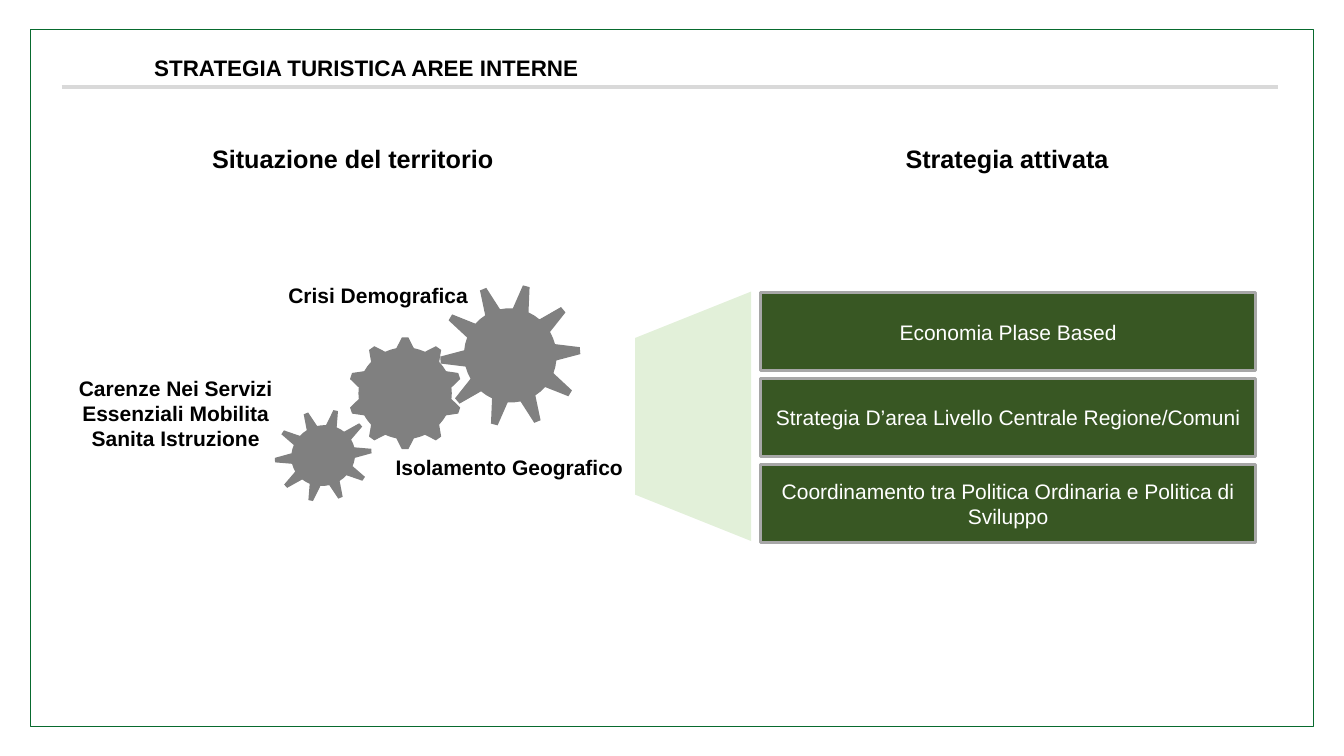
from dataclasses import dataclass
from math import cos, radians, sin

from lxml import etree
from pptx import Presentation
from pptx.dml.color import RGBColor
from pptx.enum.shapes import MSO_CONNECTOR, MSO_SHAPE
from pptx.enum.text import MSO_ANCHOR, MSO_AUTO_SIZE, PP_ALIGN
from pptx.oxml.ns import qn
from pptx.util import Cm, Pt

LEFT, CENTER = PP_ALIGN.LEFT, PP_ALIGN.CENTER
MIDDLE = MSO_ANCHOR.MIDDLE
FIT_SHAPE = MSO_AUTO_SIZE.SHAPE_TO_FIT_TEXT
RECTANGLE, TRAPEZOID = MSO_SHAPE.RECTANGLE, MSO_SHAPE.TRAPEZOID
STRAIGHT = MSO_CONNECTOR.STRAIGHT


@dataclass(frozen=True)
class Theme:
    font: str = "Arial"
    ink: str = "000000"
    paper: str = "FFFFFF"
    frame: str = "086A2E"
    rule: str = "D9D9D9"
    gear: str = "808080"
    funnel: str = "E2F0D9"
    bar: str = "385723"
    bar_edge: str = "A7A7A7"
    title_size: int = 32
    heading_size: int = 36
    body_size: int = 30


@dataclass(frozen=True)
class Box:
    """A region in centimetres."""
    left: float
    top: float
    width: float
    height: float

    def inner(self, x, y, width, height):
        return Box(self.left + x, self.top + y, width, height)

    def lengths(self):
        return Cm(self.left), Cm(self.top), Cm(self.width), Cm(self.height)


@dataclass(frozen=True)
class Gear:
    """An elliptic gear; tooth angles are half-widths in degrees."""
    x: float
    y: float
    radius_x: float
    radius_y: float
    tilt: float
    root: float
    tip_angle: float
    base_angle: float


THEME = Theme()
TEETH = 10

GEARS = (
    Gear(17.09, 12.73, 2.87, 2.82, 0, 0.82, 3.3, 10.8),
    Gear(12.96, 15.87, 2.46, 2.3, -22.3, 0.66, 2.8, 10),
    Gear(22.39, 10.82, 3.52, 3.61, -22.3, 0.66, 2.8, 10),
)
PROBLEMS = (
    ("Crisi Demografica", (9.52, 7.13, 12.42, 2.29)),
    ("Isolamento Geografico", (16.08, 15.8, 12.52, 4.45)),
    ("Carenze Nei Servizi Essenziali Mobilita Sanita Istruzione",
     (0, 11.83, 11.05, 3.99)),
)
STRATEGIES = (
    "Economia Plase Based",
    "Strategia D’area Livello Centrale Regione/Comuni",
    "Coordinamento tra Politica Ordinaria e Politica di Sviluppo",
)


def color(value):
    return RGBColor.from_string(value)


def paint(shape, fill=None, edge=None, edge_width=0):
    shape.shadow.inherit = False
    if fill:
        shape.fill.solid()
        shape.fill.fore_color.rgb = color(fill)
    else:
        shape.fill.background()
    if edge:
        shape.line.color.rgb = color(edge)
        shape.line.width = Pt(edge_width)
    else:
        shape.line.fill.background()


def write(shape, text, size, ink, bold=False, align=CENTER, inset=(0, 0)):
    frame = shape.text_frame
    frame.word_wrap = True
    frame.margin_left = frame.margin_right = Cm(inset[0])
    frame.margin_top = frame.margin_bottom = Cm(inset[1])
    frame.text = text
    paragraph = frame.paragraphs[0]
    paragraph.alignment = align
    font = paragraph.runs[0].font
    font.name, font.size, font.bold = THEME.font, Pt(size), bold
    font.color.rgb = color(ink)
    return frame


def add_label(slide, box, text, size, **options):
    textbox = slide.shapes.add_textbox(*box.lengths())
    return write(textbox, text, size, THEME.ink, bold=True, **options)


def add_heading(slide, box, text, size, align=LEFT, inset=(0.25, 0.13)):
    frame = add_label(slide, box, text, size, align=align, inset=inset)
    frame.word_wrap = False
    frame.auto_size = FIT_SHAPE


def add_gear(slide, box, gear):
    tilt = radians(gear.tilt)

    def point(angle, scale):
        x = gear.radius_x * scale * sin(radians(angle))
        y = -gear.radius_y * scale * cos(radians(angle))
        return (Cm(box.left + gear.x + x * cos(tilt) - y * sin(tilt)),
                Cm(box.top + gear.y + x * sin(tilt) + y * cos(tilt)))

    # Each tooth: base, two tip corners, base, then the valley
    step = 360 / TEETH
    profile = ((-gear.base_angle, gear.root), (-gear.tip_angle, 1),
               (gear.tip_angle, 1), (gear.base_angle, gear.root),
               (step / 2, gear.root))
    points = [point(tooth * step + angle, scale)
              for tooth in range(TEETH) for angle, scale in profile]
    builder = slide.shapes.build_freeform(*points[0])
    builder.add_line_segments(points[1:], close=True)
    paint(builder.convert_to_shape(), THEME.gear)


def add_header(slide, box):
    # Rule under the title
    y = Cm(box.top + 2.9)
    rule = slide.shapes.add_connector(
        STRAIGHT, Cm(box.left + 1.55), y, Cm(box.left + 62.84), y)
    rule.line.color.rgb = color(THEME.rule)
    rule.line.width = Pt(6)
    etree.SubElement(rule._element.spPr, qn("a:effectLst"))

    # Page frame and title
    paint(slide.shapes.add_shape(RECTANGLE, *box.lengths()),
          edge=THEME.frame, edge_width=1)
    add_heading(slide, box.inner(5.77, 0.99, 22.3, 1.88),
                "STRATEGIA TURISTICA AREE INTERNE", THEME.title_size,
                align=CENTER, inset=(0.25, 0.25))


def add_territory(slide, box):
    add_heading(slide, box.inner(7.11, 0, 14.83, 1.8),
                "Situazione del territorio", THEME.heading_size)
    for gear in GEARS:
        add_gear(slide, box, gear)
    for text, place in PROBLEMS:
        add_label(slide, box.inner(*place), text, THEME.body_size)


def add_strategy(slide, box):
    add_heading(slide, box.inner(13.39, 0, 10.85, 1.8),
                "Strategia attivata", THEME.heading_size)

    # Funnel opening towards the bars
    funnel = slide.shapes.add_shape(
        TRAPEZOID, *box.inner(-3.35, 10.97, 12.57, 5.84).lengths())
    funnel.adjustments[0] = 0.4
    funnel.rotation = 270
    paint(funnel, THEME.funnel)

    # Strategy bars at an equal pitch
    for row, text in enumerate(STRATEGIES):
        bar = slide.shapes.add_shape(
            RECTANGLE,
            *box.inner(6.35, 7.67 + row * 4.33, 24.92, 3.91).lengths())
        paint(bar, THEME.bar, THEME.bar_edge, 4.5)
        frame = write(bar, text, THEME.body_size, THEME.paper,
                      inset=(0.3, 0.2))
        frame.vertical_anchor = MIDDLE
        frame.paragraphs[0].space_after = Pt(8)


def main():
    presentation = Presentation()
    presentation.slide_width = Cm(67.74)
    presentation.slide_height = Cm(38.1)
    slide = presentation.slides.add_slide(presentation.slide_layouts[6])
    add_header(slide, Box(1.55, 1.47, 64.67, 36.63 - 1.47))
    add_territory(slide, Box(3.33, 7.09, 28.6, 20.24))
    add_strategy(slide, Box(32, 7.09, 31.27, 20.24))
    presentation.save("out.pptx")


if __name__ == "__main__":
    main()
